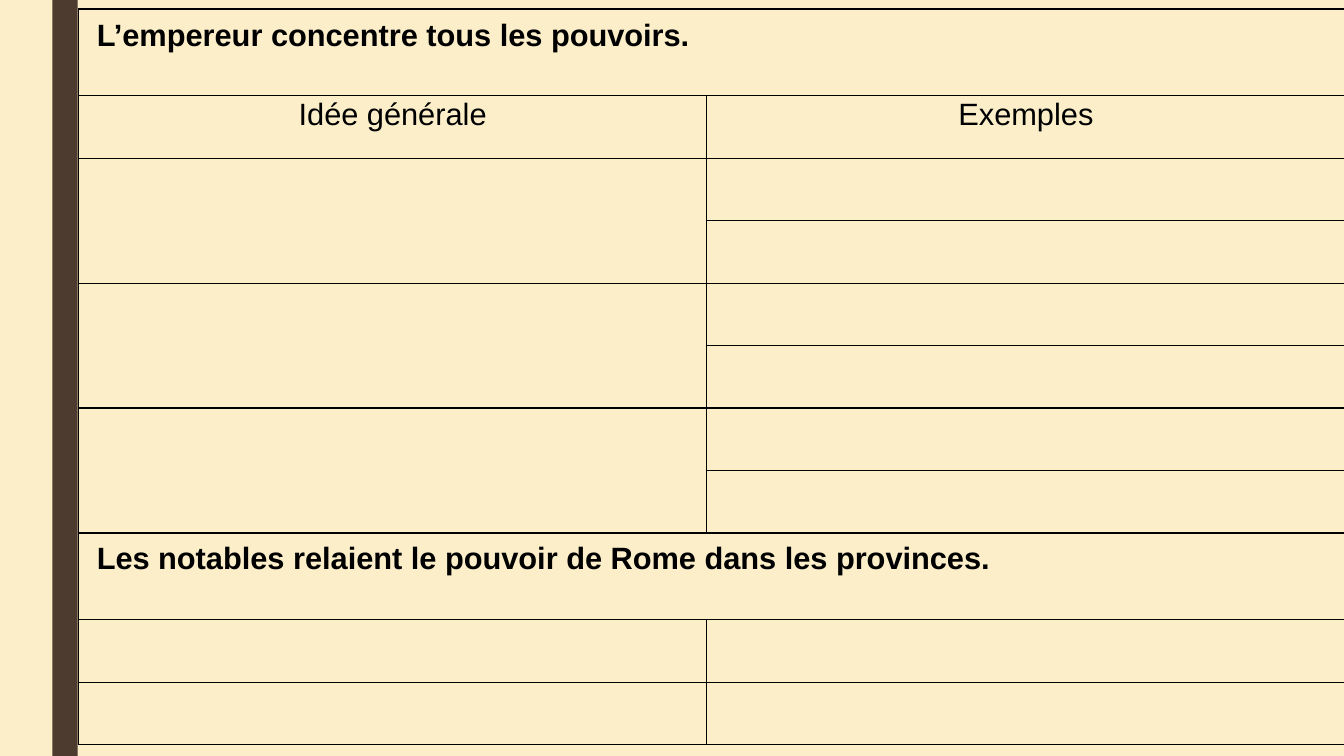
"""Build a one-slide worksheet table on imperial power and provincial notables."""
from dataclasses import dataclass

from lxml import etree
from pptx import Presentation
from pptx.dml.color import RGBColor
from pptx.enum.shapes import MSO_SHAPE
from pptx.enum.text import PP_ALIGN
from pptx.oxml.ns import qn
from pptx.util import Inches, Pt

RECTANGLE = MSO_SHAPE.RECTANGLE
LEFT, CENTER, JUSTIFY = PP_ALIGN.LEFT, PP_ALIGN.CENTER, PP_ALIGN.JUSTIFY


@dataclass(frozen=True)
class Theme:
    background: str = "FBEEC9"
    band: str = "4E3B30"
    ink: str = "000000"
    font: str = "Arial"
    size: int = 22
    border: int = 1


theme = Theme()


def write(cell, text, bold=False, align=LEFT, margins=(0.18, 0.09, 0.18, 0.09)):
    cell.margin_left, cell.margin_top, cell.margin_right, cell.margin_bottom = map(Inches, margins)
    para = cell.text_frame.paragraphs[0]
    para.alignment = align
    span = para.add_run()
    span.text = text
    span.font.name = theme.font
    span.font.size = Pt(theme.size)
    span.font.bold = bold
    span.font.color.rgb = RGBColor.from_string(theme.ink)


def outline(cell):
    properties = cell._tc.get_or_add_tcPr()
    for index, side in enumerate(("lnL", "lnR", "lnT", "lnB")):
        line = etree.Element(qn(f"a:{side}"), w=str(Pt(theme.border)))
        fill = etree.SubElement(line, qn("a:solidFill"))
        etree.SubElement(fill, qn("a:srgbClr"), val=theme.ink)
        properties.insert(index, line)


deck = Presentation()
deck.slide_width, deck.slide_height = Inches(13.33), Inches(7.5)
page = deck.slides.add_slide(deck.slide_layouts[6])
page.background.fill.solid()
page.background.fill.fore_color.rgb = RGBColor.from_string(theme.background)

band = page.shapes.add_shape(RECTANGLE, Inches(0.52), 0, Inches(0.25), deck.slide_height)
band.shadow.inherit = False
band.fill.solid()
band.fill.fore_color.rgb = RGBColor.from_string(theme.band)
band.line.fill.background()

column_widths = (6.23, 6.33)
heading_rows = {
    0: ("L’empereur concentre tous les pouvoirs.", LEFT),
    8: ("Les notables relaient le pouvoir de Rome dans les provinces.", JUSTIFY),
}
row_heights = [0.86 if row in heading_rows else 0.62 for row in range(11)]
table = page.shapes.add_table(
    len(row_heights), len(column_widths), Inches(0.78), Inches(0.09),
    Inches(sum(column_widths)), Inches(sum(row_heights))).table
table.first_row = table.horz_banding = False
for column, width in zip(table.columns, column_widths):
    column.width = Inches(width)
for row, height in zip(table.rows, row_heights):
    row.height = Inches(height)
for cell in table.iter_cells():
    cell.fill.background()
    outline(cell)

for row, (heading, align) in heading_rows.items():
    table.cell(row, 0).merge(table.cell(row, 1))
    write(table.cell(row, 0), heading, bold=True, align=align)
for column, label in enumerate(("Idée générale", "Exemples")):
    write(table.cell(1, column), label, align=CENTER, margins=(0.14, 0.02, 0.14, 0))
for row in range(2, 8, 2):
    table.cell(row, 0).merge(table.cell(row + 1, 0))

deck.save("out.pptx")
